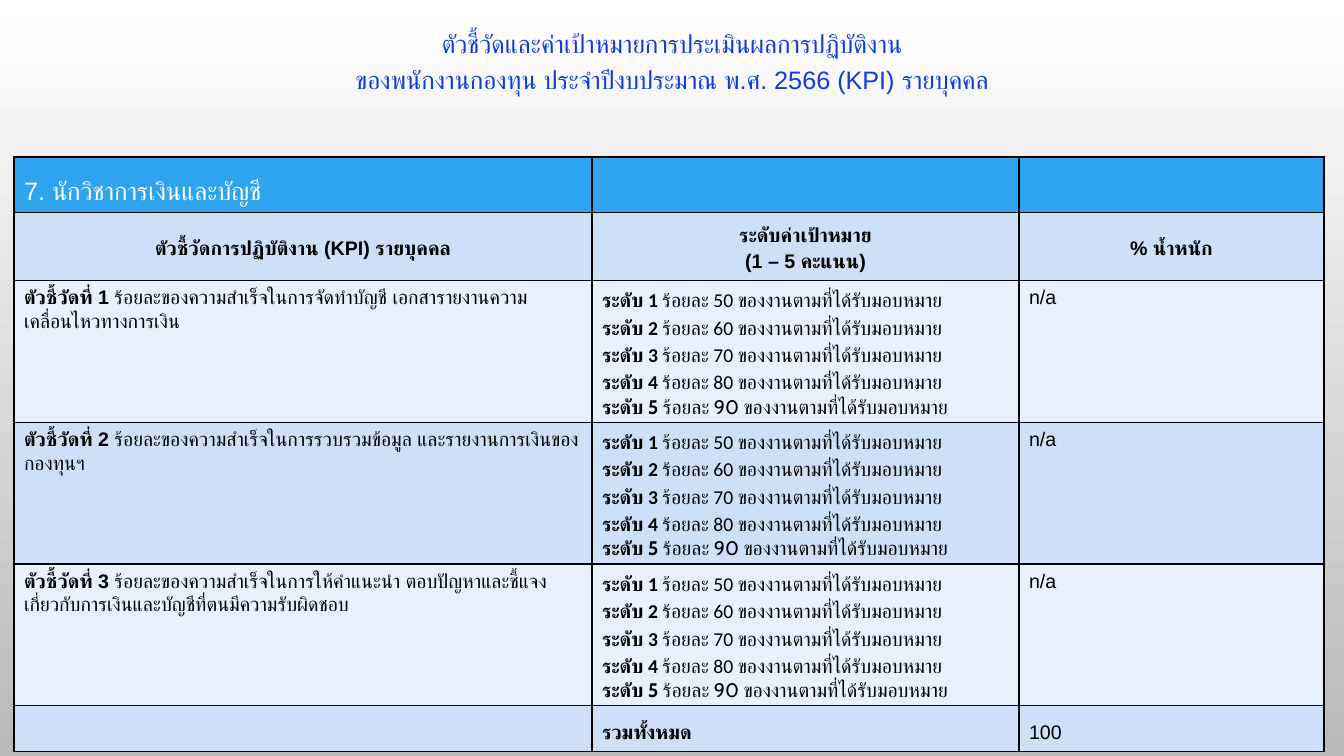
import pptx
import pptx.dml.color
import pptx.enum.text
import pptx.oxml.ns
import pptx.util
from lxml import etree

RGB = pptx.dml.color.RGBColor
Pt = pptx.util.Pt
ALIGN = pptx.enum.text.PP_ALIGN
ANCHOR = pptx.enum.text.MSO_ANCHOR
qn = pptx.oxml.ns.qn

WHITE = RGB(0xFF, 0xFF, 0xFF)
BLACK = RGB(0x00, 0x00, 0x00)
GREY = RGB(0xB9, 0xB9, 0xB9)
TITLE_BLUE = RGB(0x0E, 0x3E, 0xDA)
BANNER_BLUE = RGB(0x2F, 0xA3, 0xEE)
BAND_DARK = RGB(0xCD, 0xE0, 0xF8)
BAND_LIGHT = RGB(0xE8, 0xF0, 0xFC)

SLIDE_W, SLIDE_H = 1344, 756
EMU_PER_PX = 12192000 / SLIDE_W

# Text formats: size, spacing, alignment, font, colour
BASE = {"size": 14, "spacing": 1.0, "align": ALIGN.LEFT, "font": "Arial", "color": BLACK}
TITLE = BASE | {"size": 18, "spacing": 1.2, "align": ALIGN.CENTER, "color": TITLE_BLUE}
BANNER = BASE | {"size": 18, "spacing": 1.5, "color": WHITE}
HEADING = BASE | {"spacing": 1.2, "align": ALIGN.CENTER}
BODY = BASE | {"spacing": Pt(16.8)}
LEVEL = BASE | {"spacing": 1.15, "font": "Calibri"}
TOP_LEVEL = BASE | {"font": "Cabin"}
TOTAL = BASE | {"spacing": 1.5}

TITLE_LINES = [
    "ตัวชี้วัดและค่าเป้าหมายการประเมินผลการปฏิบัติงาน",
    "ของพนักงานกองทุน ประจำปีงบประมาณ พ.ศ. 2566 (KPI) รายบุคคล",
]
INDICATORS = [
    "ร้อยละของความสำเร็จในการจัดทำบัญชี เอกสารายงานความเคลื่อนไหวทางการเงิน",
    "ร้อยละของความสำเร็จในการรวบรวมข้อมูล และรายงานการเงินของกองทุนฯ",
    "ร้อยละของความสำเร็จในการให้คำแนะนำ ตอบปัญหาและชี้แจงเกี่ยวกับการเงินและบัญชีที่ตนมีความรับผิดชอบ",
]


def px(length):
    return pptx.util.Emu(round(length * EMU_PER_PX))


def write(frame, lines):
    """Each line is (format, bold text, plain text)."""
    for i, (look, bold_text, plain_text) in enumerate(lines):
        paragraph = frame.paragraphs[0] if i == 0 else frame.add_paragraph()
        for name, value in {"alignment": look["align"], "line_spacing": look["spacing"]}.items():
            setattr(paragraph, name, value)
        for text, bold in ((bold_text, True), (plain_text, False)):
            if not text:
                continue
            run = paragraph.add_run()
            run.text = text
            font_values = {"name": look["font"], "size": Pt(look["size"]), "bold": bold}
            for name, value in font_values.items():
                setattr(run.font, name, value)
            run.font.color.rgb = look["color"]
            # Thai letters take the complex-script font
            script_font = etree.SubElement(run.font._element, qn("a:cs"))
            script_font.set("typeface", look["font"])


def draw_border(cell):
    properties = cell._tc.get_or_add_tcPr()
    for side in ("a:lnL", "a:lnR", "a:lnT", "a:lnB"):
        line = etree.SubElement(properties, qn(side), w=str(Pt(1)))
        fill = etree.SubElement(line, qn("a:solidFill"))
        etree.SubElement(fill, qn("a:srgbClr"), val=str(BLACK))


def paint_background(slide):
    fill = slide.background.fill
    fill.gradient()
    fill.gradient_angle = 270
    for stop, position, color in zip(fill.gradient_stops, (0, 1), (WHITE, GREY)):
        stop.position = position
        stop.color.rgb = color


def add_title(slide, left, top, width, height):
    frame = slide.shapes.add_textbox(px(left), px(top), px(width), px(height)).text_frame
    frame.word_wrap = True
    write(frame, [(TITLE, "", line) for line in TITLE_LINES])


def kpi_rows():
    """Rows of (height, fill, anchor, cells)."""
    rows = [
        (44, BANNER_BLUE, ANCHOR.MIDDLE, [[(BANNER, "", "7. นักวิชาการเงินและบัญชี")], [], []]),
        (68, BAND_DARK, ANCHOR.MIDDLE, [
            [(HEADING, "ตัวชี้วัดการปฏิบัติงาน (KPI) รายบุคคล", "")],
            [(HEADING, "ระดับค่าเป้าหมาย", ""), (HEADING, "(1 – 5 คะแนน)", "")],
            [(HEADING, "% น้ำหนัก", "")],
        ]),
    ]
    levels = [
        (TOP_LEVEL if n == 5 else LEVEL, f"ระดับ {n} ", f"ร้อยละ {40 + 10 * n} ของงานตามที่ได้รับมอบหมาย")
        for n in range(1, 6)
    ]
    for n, indicator in enumerate(INDICATORS, 1):
        band = BAND_LIGHT if n % 2 else BAND_DARK
        cells = [[(BODY, f"ตัวชี้วัดที่ {n} ", indicator)], levels, [(BODY, "", "n/a")]]
        rows.append((126, band, ANCHOR.TOP, cells))
    rows.append((43, BAND_DARK, ANCHOR.TOP, [[], [(TOTAL, "รวมทั้งหมด", "")], [(TOTAL, "", "100")]]))
    return rows


def add_kpi_table(slide, left, top, width, height):
    rows = kpi_rows()
    table = slide.shapes.add_table(len(rows), 3, px(left), px(top), px(width), px(height)).table
    for name, value in {"first_row": False, "horz_banding": False}.items():
        setattr(table, name, value)
    indicator_w, level_w = 578, 427
    for column, column_w in zip(table.columns, (indicator_w, level_w, width - indicator_w - level_w)):
        column.width = px(column_w)
    for row, (row_h, color, anchor, contents) in zip(table.rows, rows):
        row.height = px(row_h)
        for cell, lines in zip(row.cells, contents):
            draw_border(cell)
            cell.fill.solid()
            cell.fill.fore_color.rgb = color
            cell.vertical_anchor = anchor
            write(cell.text_frame, lines)


def main():
    deck = pptx.Presentation()
    deck.slide_width, deck.slide_height = px(SLIDE_W), px(SLIDE_H)
    slide = deck.slides.add_slide(deck.slide_layouts[6])
    paint_background(slide)
    add_title(slide, 0, 17, SLIDE_W, 124)
    add_kpi_table(slide, 14, 157, 1310, 590)
    deck.save("out.pptx")


if __name__ == "__main__":
    main()
